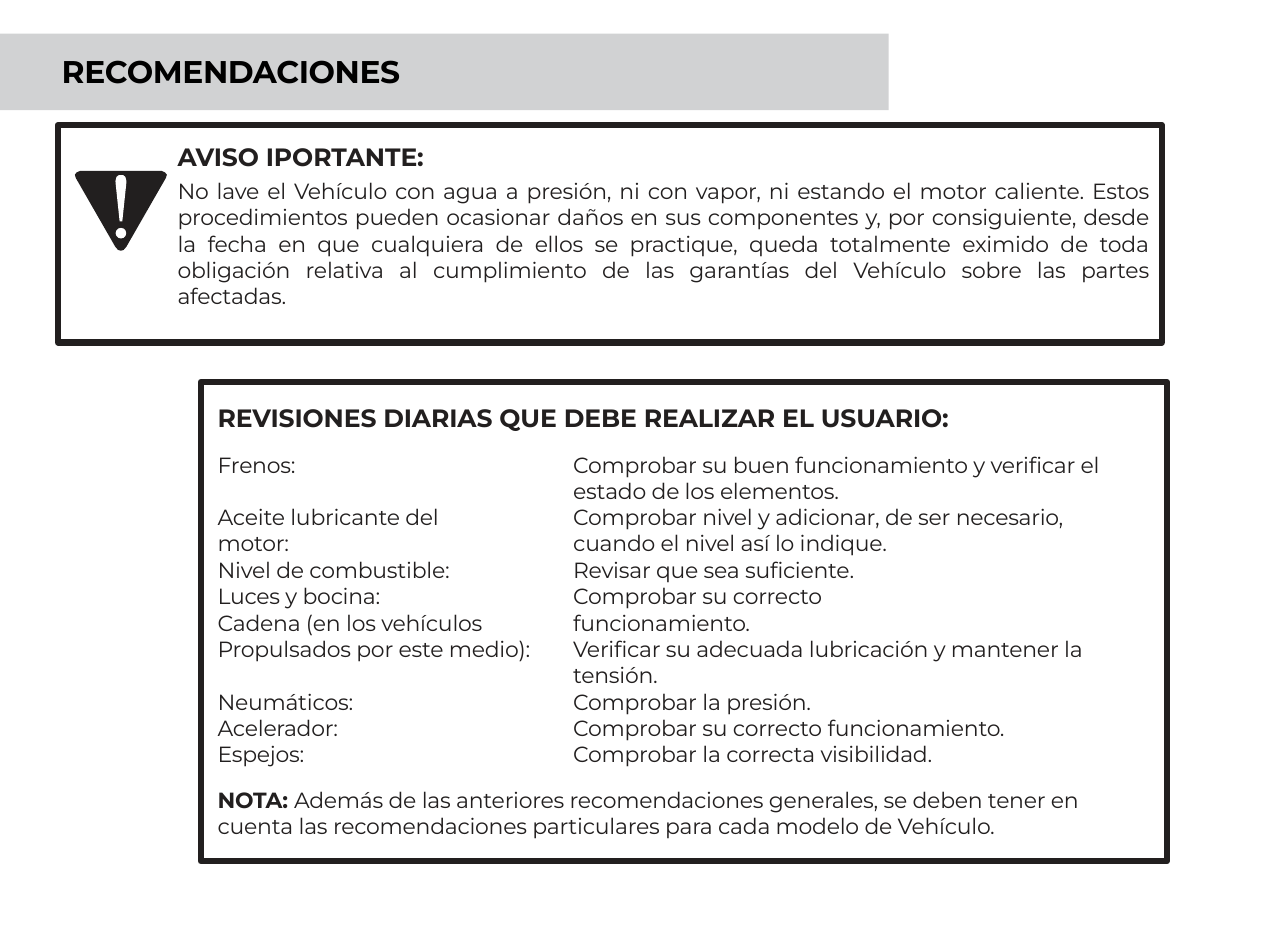
import pptx
import pptx.dml.color
import pptx.enum.shapes
import pptx.enum.text
import pptx.oxml.ns
import pptx.util
from lxml import etree

SHAPE = pptx.enum.shapes.MSO_SHAPE
ALIGN = pptx.enum.text.PP_ALIGN
INK = "221F1F"

NOTICE = (
    "No lave el Vehículo con agua a presión, ni con vapor, ni estando el motor caliente. "
    "Estos procedimientos pueden ocasionar daños en sus componentes y, por consiguiente, "
    "desde la fecha en que cualquiera de ellos se practique, queda totalmente eximido "
    "de toda obligación relativa al cumplimiento de las garantías del Vehículo sobre "
    "las partes afectadas."
)

# Label row, label, instruction row, instruction
CHECKS = [
    (0, "Frenos:", 0, "Comprobar su buen funcionamiento y verificar el\vestado de los elementos."),
    (2, "Aceite lubricante del\vmotor:", 2,
     "Comprobar nivel y adicionar, de ser necesario,\vcuando el nivel así lo indique."),
    (4, "Nivel de combustible:", 4, "Revisar que sea suficiente."),
    (5, "Luces y bocina:", 5, "Comprobar su correcto\vfuncionamiento."),
    (6, "Cadena (en los vehículos\vPropulsados por este medio):", 7,
     "Verificar su adecuada lubricación y mantener la\vtensión."),
    (9, "Neumáticos:", 9, "Comprobar la presión."),
    (10, "Acelerador:", 10, "Comprobar su correcto funcionamiento."),
    (11, "Espejos:", 11, "Comprobar la correcta visibilidad."),
]

# Right halves of outlines symmetric about a vertical axis, as shares of their box
TRIANGLE = [(0.44, 0), (0.48, 0.02), (0.5, 0.05), (0.49, 0.09), (0.06, 0.95), (0.03, 0.99), (0, 1)]
STROKE = [(0.2, 0), (0.4, 0.04), (0.5, 0.13), (0.47, 0.2), (0.12, 1)]


def rgb(value):
    return pptx.dml.color.RGBColor.from_string(value)


def write(p, text, size=7, bold=False, color=INK, spacing=-0.05):
    """Append text to a paragraph; a vertical tab marks a line break."""
    for i, line in enumerate(text.split("\v")):
        if i:
            p.add_line_break()
        r = p.add_run()
        r.text = line
        r.font.name = "Montserrat"
        r.font.size = pptx.util.Pt(size)
        r.font.bold = bold
        r.font.color.rgb = rgb(color)
        r._r.get_or_add_rPr().set("spc", str(round(spacing * 100)))


class Page:
    """A slide whose lengths are percentages of its width and height."""

    def __init__(self, prs):
        self.s = prs.slides.add_slide(prs.slide_layouts[6])
        self.col = prs.slide_width / 100
        self.row = prs.slide_height / 100

    def box(self, x, y, w, h):
        return [round(v) for v in (x * self.col, y * self.row, w * self.col, h * self.row)]

    def paint(self, sp, fill):
        sp.shadow.inherit = False
        sp.fill.solid()
        sp.fill.fore_color.rgb = rgb(fill)
        sp.line.fill.background()

    def shape(self, x, y, w, h, fill, kind=SHAPE.RECTANGLE):
        self.paint(self.s.shapes.add_shape(kind, *self.box(x, y, w, h)), fill)

    def frame(self, x, y, w, h):
        sp = self.s.shapes.add_shape(SHAPE.RECTANGLE, *self.box(x, y, w, h))
        sp.shadow.inherit = False
        sp.fill.background()
        sp.line.color.rgb = rgb(INK)
        sp.line.width = pptx.util.Pt(2)
        etree.SubElement(sp.line._ln, pptx.oxml.ns.qn("a:round"))

    def mirrored(self, axis, y, w, h, half, fill):
        """Draw a closed outline from its right half."""
        outline = half + [(-dx, dy) for dx, dy in reversed(half)]
        points = [((axis + dx * w) * self.col, (y + dy * h) * self.row) for dx, dy in outline]
        builder = self.s.shapes.build_freeform(*points[0])
        builder.add_line_segments(points[1:])
        self.paint(builder.convert_to_shape(), fill)

    def text(self, x, y, w, h, text="", align=ALIGN.LEFT, **style):
        """Add a text box and return its text frame."""
        tf = self.s.shapes.add_textbox(*self.box(x, y, w, h)).text_frame
        tf.word_wrap = True
        tf.margin_left = tf.margin_right = tf.margin_top = tf.margin_bottom = 0
        p = tf.paragraphs[0]
        p.alignment = align
        if text:
            write(p, text, **style)
        return tf


def add_notice(page):
    page.frame(4.5, 13.4, 85.7, 23.3)
    axis = 9.39
    page.mirrored(axis, 18.3, 7.14, 8.56, TRIANGLE, INK)
    page.mirrored(axis, 18.75, 0.86, 4.95, STROKE, "FFFFFF")
    dot = 0.82
    page.shape(axis - dot / 2, 24.4, dot, dot * page.col / page.row, "FFFFFF", SHAPE.OVAL)
    tf = page.text(13.8, 15.1, 75.4, 19, "AVISO IPORTANTE:", size=8, bold=True)
    p = tf.add_paragraph()
    p.alignment = ALIGN.JUSTIFY
    p.space_before = pptx.util.Pt(2.1)
    write(p, NOTICE)


def add_checks(page):
    left, middle, top, step = 16.9, 44.5, 48.3, 2.82
    page.frame(15.6, 40.9, 75, 51.3)
    page.text(left, 43.1, 70, 4, "REVISIONES DIARIAS QUE DEBE REALIZAR EL USUARIO:", size=8, bold=True)
    for label_row, label, row, instruction in CHECKS:
        for x, w, n, words in ((left, 27, label_row, label), (middle, 45, row, instruction)):
            page.text(x, top + n * step, w, step * (1 + words.count("\v")), words)
    p = page.text(left, 84.2, 70, 2 * step).paragraphs[0]
    write(p, "NOTA: ", bold=True)
    write(p, "Además de las anteriores recomendaciones generales, se deben tener en\v"
             "cuenta las recomendaciones particulares para cada modelo de Vehículo.")


def main():
    prs = pptx.Presentation()
    prs.slide_width = pptx.util.Inches(5.71)
    prs.slide_height = pptx.util.Inches(4.14)
    page = Page(prs)
    page.shape(0, 3.6, 69, 8.2, "D1D2D3")
    page.text(4.8, 5.6, 60, 4.6, "RECOMENDACIONES", size=10, bold=True, color="000000", spacing=-0.1)
    add_notice(page)
    add_checks(page)
    prs.save("out.pptx")


if __name__ == "__main__":
    main()
